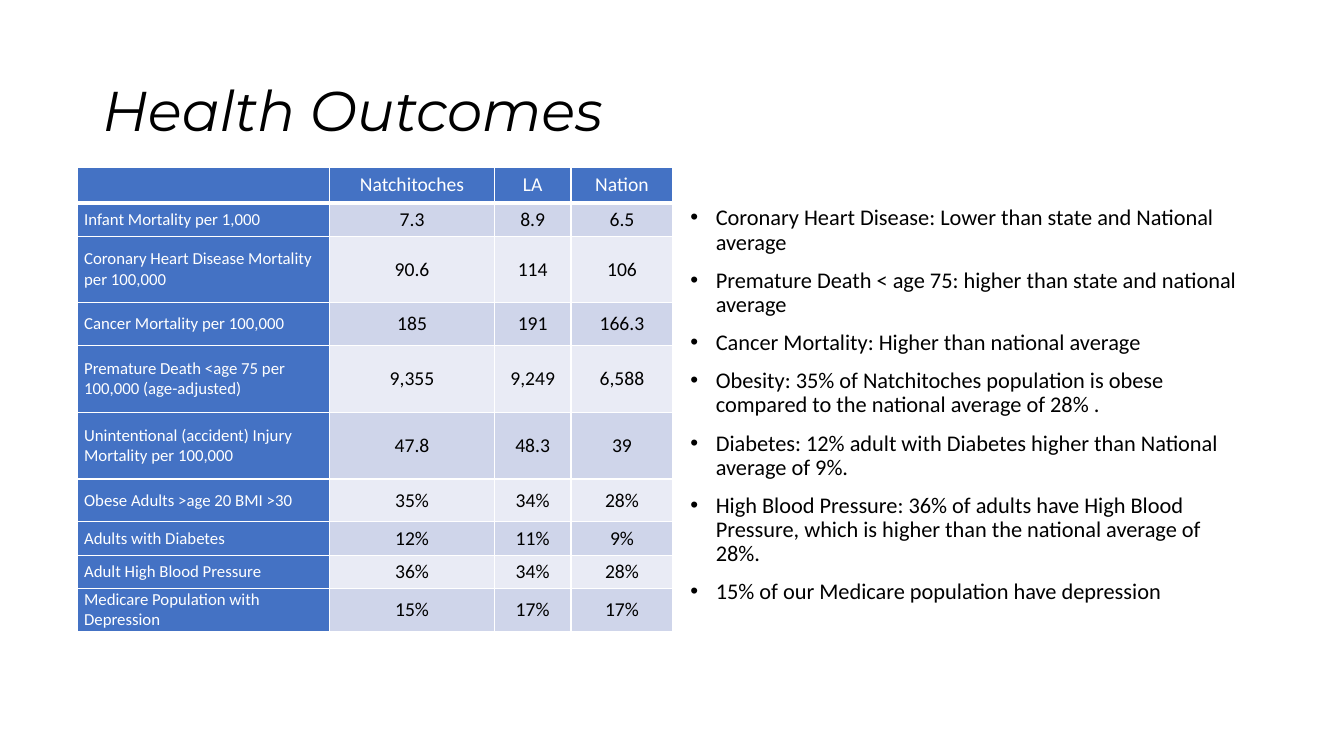
from dataclasses import dataclass

from lxml.etree import SubElement
from pptx import Presentation
from pptx.dml.color import RGBColor as Rgb
from pptx.enum.text import MSO_ANCHOR as Anchor, PP_ALIGN as Align
from pptx.oxml.ns import qn
from pptx.util import Cm, Pt

HUES = {
    "head": "4472C4",
    "odd": "CFD5EA",
    "even": "E9EBF5",
    "white": "FFFFFF",
    "black": "000000",
}


@dataclass
class Row:
    label: str
    values: tuple[str, str, str]
    height: float


SHORT, MID, TALL = 0.84, 1.08, 1.68
WIDTHS = (6.35, 4.15, 1.93, 2.57)
ROWS = [
    Row("", ("Natchitoches", "LA", "Nation"), 0.89),
    Row("Infant Mortality per 1,000", ("7.3", "8.9", "6.5"), SHORT),
    Row("Coronary Heart Disease Mortality per 100,000", ("90.6", "114", "106"), TALL),
    Row("Cancer Mortality per 100,000", ("185", "191", "166.3"), MID),
    Row("Premature Death <age 75 per 100,000 (age-adjusted)", ("9,355", "9,249", "6,588"), TALL),
    Row("Unintentional (accident) Injury Mortality per 100,000", ("47.8", "48.3", "39"), TALL),
    Row("Obese Adults >age 20 BMI >30", ("35%", "34%", "28%"), MID),
    Row("Adults with Diabetes", ("12%", "11%", "9%"), SHORT),
    Row("Adult High Blood Pressure", ("36%", "34%", "28%"), SHORT),
    Row("Medicare Population with Depression", ("15%", "17%", "17%"), MID),
]
POINTS = [
    "Coronary Heart Disease: Lower than state and National average",
    "Premature Death < age 75: higher than state and national average",
    "Cancer Mortality: Higher than national average",
    "Obesity: 35% of Natchitoches population is obese compared to the national average of 28% .",
    "Diabetes: 12% adult with Diabetes higher than National average of 9%.",
    "High Blood Pressure: 36% of adults have High Blood Pressure, "
    "which is higher than the national average of 28%.",
    "15% of our Medicare population have depression",
]


def write(para, text: str, *, size: float, hue: str = "black", face: str = "Calibri",
          italic: bool = False, align=Align.LEFT, line: float = 1.0,
          before: float = 0, after: float = 0) -> None:
    para.alignment = align
    para.line_spacing = line
    para.space_before, para.space_after = Pt(before), Pt(after)
    if not text:
        return
    run = para.add_run()
    run.text = text
    font = run.font
    font.name, font.size = face, Pt(size)
    font.bold, font.italic = False, italic
    font.color.rgb = Rgb.from_string(HUES[hue])


def add_bullet(para) -> None:
    props = para._p.get_or_add_pPr()
    props.set("marL", str(Cm(0.64)))
    props.set("indent", str(Cm(-0.64)))
    SubElement(props, qn("a:buFont"), typeface="Arial")
    SubElement(props, qn("a:buChar"), char="•")


def paint(cell, hue: str, base: float) -> None:
    """Give a cell white borders, then its fill; base is the lower border's width."""
    props = cell._tc.get_or_add_tcPr()
    for side, width in (("lnL", 1), ("lnR", 1), ("lnT", 1), ("lnB", base)):
        edge = SubElement(props, qn(f"a:{side}"), w=str(Pt(width)))
        fill = SubElement(edge, qn("a:solidFill"))
        SubElement(fill, qn("a:srgbClr"), val=HUES["white"])
    cell.fill.solid()
    cell.fill.fore_color.rgb = Rgb.from_string(HUES[hue])


def add_title(slide) -> None:
    title = slide.shapes.title
    title.left, title.top, title.width, title.height = Cm(2.33), Cm(1.01), Cm(29.21), Cm(3.68)
    frame = title.text_frame
    frame.vertical_anchor = Anchor.MIDDLE
    write(frame.paragraphs[0], "Health Outcomes", size=40, face="Montserrat",
          italic=True, line=0.9)


def add_grid(slide) -> None:
    total = sum(row.height for row in ROWS)
    table = slide.shapes.add_table(len(ROWS), len(WIDTHS), Cm(1.96), Cm(4.22),
                                   Cm(sum(WIDTHS)), Cm(total)).table
    for col, width in zip(table.columns, WIDTHS):
        col.width = Cm(width)
    for r, row in enumerate(ROWS):
        table.rows[r].height = Cm(row.height)
        band = "odd" if r % 2 else "even"
        for c, text in enumerate((row.label, *row.values)):
            cell = table.cell(r, c)
            dark = r == 0 or c == 0
            cell.margin_left = cell.margin_right = Cm(0.16)
            cell.margin_top = cell.margin_bottom = 0
            cell.vertical_anchor = Anchor.MIDDLE
            paint(cell, "head" if dark else band, 1 if r else 3)
            write(cell.text_frame.paragraphs[0], text, size=14 if c else 12,
                  hue="white" if dark else "black",
                  align=Align.CENTER if c else Align.LEFT, after=10)


def add_points(slide) -> None:
    box = slide.shapes.add_textbox(Cm(17.15), Cm(5.08), Cm(14.4), Cm(12.09))
    frame = box.text_frame
    frame.word_wrap = True
    for i, text in enumerate(POINTS):
        para = frame.add_paragraph() if i else frame.paragraphs[0]
        add_bullet(para)
        write(para, text, size=16, line=0.9, before=10 if i else 0)


def main() -> None:
    deck = Presentation()
    deck.slide_width, deck.slide_height = Cm(33.87), Cm(19.05)
    slide = deck.slides.add_slide(deck.slide_layouts[5])
    add_title(slide)
    add_grid(slide)
    add_points(slide)
    deck.save("out.pptx")


if __name__ == "__main__":
    main()
